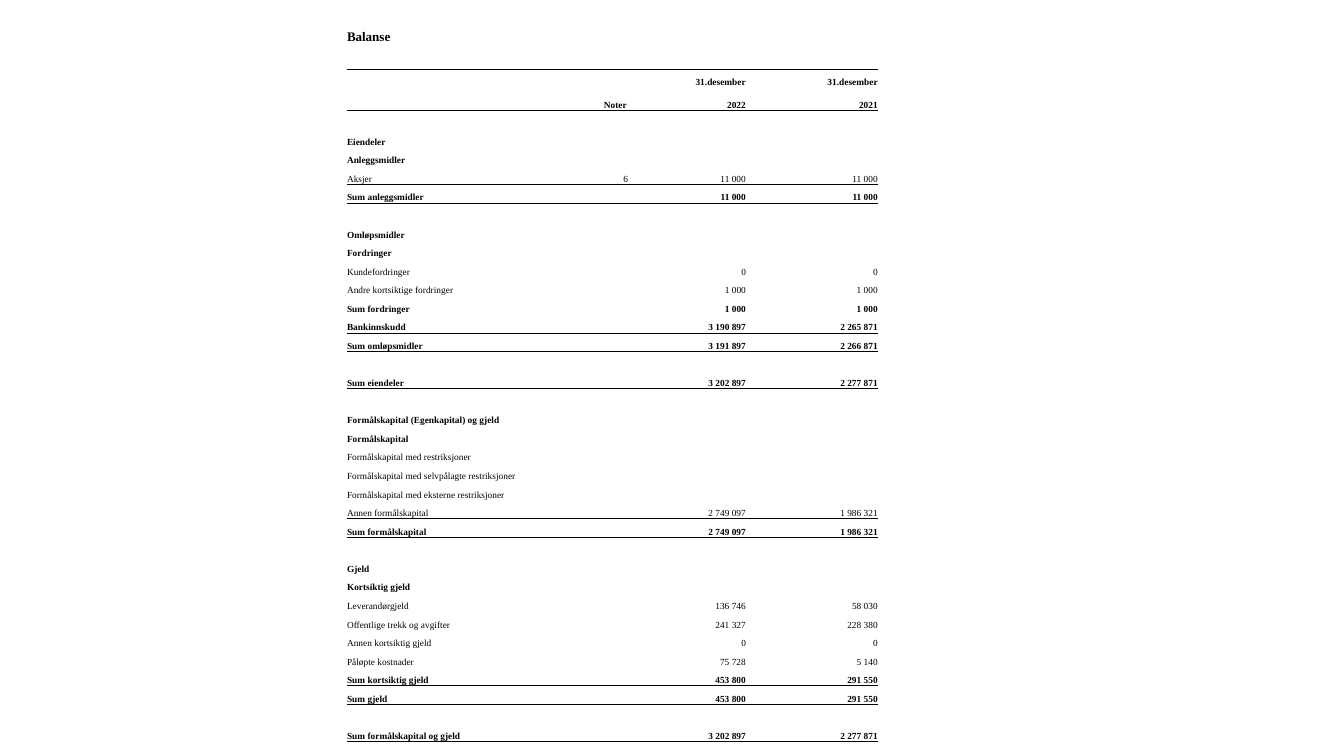
from dataclasses import dataclass

import pptx
import pptx.dml.color
import pptx.enum.text
import pptx.oxml
import pptx.oxml.ns
import pptx.slide
import pptx.table
import pptx.util

PX = 914  # EMU per px, about a thousandth of an inch
COLORS = {"ink": "000000", "paper": "FFFFFF"}
FONT = "Times New Roman"
PLAIN_TABLE_STYLE = "{2D5ABB26-0587-4C30-8999-92F81FD0307C}"
ALIGN = pptx.enum.text.PP_ALIGN

LEFT, TOP = 2583, 150
COLUMN_WIDTHS = (1912, 326, 732, 982)
HEAD_HEIGHTS = (182, 182, 138, 168)
BODY_HEIGHT = 4712


@dataclass
class Entry:
    label: str = ""
    current: str = ""
    previous: str = ""
    note: str = ""
    bold: bool = True
    ruled: bool = False
    filled: bool = False
    spans_note: bool = False
    note_align: ALIGN = ALIGN.LEFT
    size: int = 5


def item(label: str, current: str = "", previous: str = "", **options) -> Entry:
    """An ordinary line of the balance, in regular weight."""
    return Entry(label, current, previous, bold=False, **options)


def total(label: str, current: str, previous: str, filled: bool = False) -> Entry:
    return Entry(label, current, previous, ruled=True, filled=filled)


HEAD = [
    Entry("Balanse", size=7),
    Entry(ruled=True),
    Entry("", "31.desember", "31.desember", filled=True),
    Entry("", "2022", "2021", note="Noter", ruled=True, filled=True),
]
BODY = [
    Entry(),
    Entry("Eiendeler"),
    Entry("Anleggsmidler"),
    item("Aksjer", "11 000", "11 000", note="6", note_align=ALIGN.CENTER, ruled=True),
    total("Sum anleggsmidler", "11 000", "11 000"),
    Entry(),
    Entry("Omløpsmidler"),
    Entry("Fordringer"),
    item("Kundefordringer", "0", "0"),
    item("Andre kortsiktige fordringer", "1 000", "1 000"),
    Entry("Sum fordringer", "1 000", "1 000"),
    total("Bankinnskudd", "3 190 897", "2 265 871"),
    total("Sum omløpsmidler", "3 191 897", "2 266 871"),
    Entry(),
    total("Sum eiendeler", "3 202 897", "2 277 871", filled=True),
    Entry(),
    Entry("Formålskapital (Egenkapital) og gjeld"),
    Entry("Formålskapital"),
    item("Formålskapital med restriksjoner"),
    item("Formålskapital med selvpålagte restriksjoner", spans_note=True),
    item("Formålskapital med eksterne restriksjoner", spans_note=True),
    item("Annen formålskapital", "2 749 097", "1 986 321", ruled=True),
    total("Sum formålskapital", "2 749 097", "1 986 321"),
    Entry(),
    Entry("Gjeld"),
    Entry("Kortsiktig gjeld"),
    item("Leverandørgjeld", "136 746", "58 030"),
    item("Offentlige trekk og avgifter", "241 327", "228 380"),
    item("Annen kortsiktig gjeld", "0", "0"),
    item("Påløpte kostnader", "75 728", "5 140"),
    total("Sum kortsiktig gjeld", "453 800", "291 550"),
    total("Sum gjeld", "453 800", "291 550"),
    Entry(),
    total("Sum formålskapital og gjeld", "3 202 897", "2 277 871", filled=True),
]


def set_rule(cell: pptx.table._Cell, side: str, visible: bool) -> None:
    """Set the top (lnT) or bottom (lnB) border of a cell."""
    ink = f'<a:solidFill><a:srgbClr val="{COLORS["ink"]}"/></a:solidFill>'
    cell._tc.get_or_add_tcPr().append(pptx.oxml.parse_xml(
        f'<a:{side} {pptx.oxml.ns.nsdecls("a")} w="{pptx.util.Pt(0.5)}">'
        f'{ink if visible else "<a:noFill/>"}</a:{side}>'
    ))


def write_cell(cell: pptx.table._Cell, text: str, align: ALIGN, entry: Entry) -> None:
    cell.margin_left = cell.margin_right = cell.margin_top = cell.margin_bottom = 0
    cell.vertical_anchor = pptx.enum.text.MSO_ANCHOR.BOTTOM
    para = cell.text_frame.paragraphs[0]
    para.alignment = align
    para.font.name = FONT
    para.font.size = pptx.util.Pt(entry.size)
    para.font.bold = entry.bold
    para.font.color.rgb = pptx.dml.color.RGBColor.from_string(COLORS["ink"])
    if text:
        para.add_run().text = text
    if entry.filled:
        cell.fill.solid()
        cell.fill.fore_color.rgb = pptx.dml.color.RGBColor.from_string(COLORS["paper"])
    else:
        cell.fill.background()


def write_row(table: pptx.table.Table, index: int, entry: Entry, rule_above: bool) -> None:
    texts = (entry.label, entry.note, entry.current, entry.previous)
    aligns = (ALIGN.LEFT, entry.note_align, ALIGN.RIGHT, ALIGN.RIGHT)
    for column, (text, align) in enumerate(zip(texts, aligns)):
        cell = table.cell(index, column)
        set_rule(cell, "lnT", rule_above)
        set_rule(cell, "lnB", entry.ruled)
        write_cell(cell, text, align, entry)
    if entry.spans_note:
        table.cell(index, 0).merge(table.cell(index, 1))


def add_balance(page: pptx.slide.Slide) -> None:
    entries = HEAD + BODY
    frame = page.shapes.add_table(
        len(entries), len(COLUMN_WIDTHS), LEFT * PX, TOP * PX,
        sum(COLUMN_WIDTHS) * PX, (sum(HEAD_HEIGHTS) + BODY_HEIGHT) * PX,
    )
    table = frame.table
    table.first_row = table.horz_banding = False
    table._tbl.tblPr.find(pptx.oxml.ns.qn("a:tableStyleId")).text = PLAIN_TABLE_STYLE
    for column, width in zip(table.columns, COLUMN_WIDTHS):
        column.width = width * PX
    heights = [height * PX for height in HEAD_HEIGHTS]
    heights += [BODY_HEIGHT * PX // len(BODY)] * len(BODY)
    rule_above = False
    for index, (entry, height) in enumerate(zip(entries, heights)):
        table.rows[index].height = height
        write_row(table, index, entry, rule_above)
        rule_above = entry.ruled


def main() -> None:
    deck = pptx.Presentation()
    deck.slide_width = pptx.util.Inches(10)
    deck.slide_height = pptx.util.Inches(5.625)
    page = deck.slides.add_slide(deck.slide_layouts[6])
    add_balance(page)
    deck.save("out.pptx")


if __name__ == "__main__":
    main()
